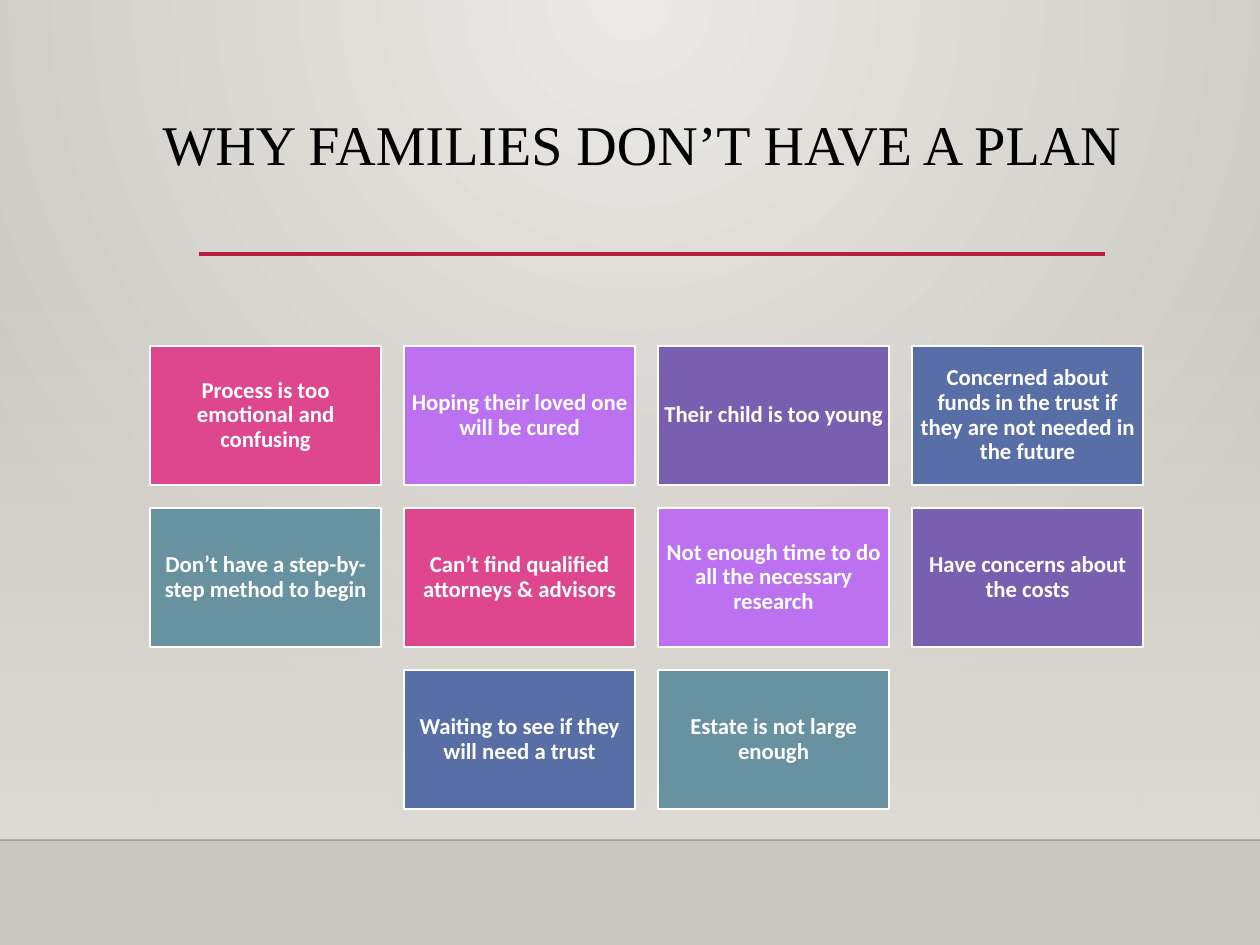
import pptx
import pptx.util
import pptx.dml.color
import pptx.enum.shapes
import pptx.enum.text
import pptx.oxml
import pptx.oxml.ns

WIDTH, HEIGHT = 1260, 945
EMU_PER_PX = 914400 / 126
ALIGN = pptx.enum.text.PP_ALIGN
ANCHOR = pptx.enum.text.MSO_ANCHOR


def px(length):
    return pptx.util.Emu(round(length * EMU_PER_PX))


def rgb(value):
    return pptx.dml.color.RGBColor.from_string(value)


def xml(tag, attributes="", children=""):
    namespace = pptx.oxml.ns.nsdecls("a")
    return pptx.oxml.parse_xml(f"<a:{tag} {namespace} {attributes}>{children}</a:{tag}>")


def set_alpha(color_parent, percent):
    color = color_parent.find(".//" + pptx.oxml.ns.qn("a:srgbClr"))
    color.append(xml("alpha", f'val="{percent * 1000}"'))


def set_values(target, values):
    for name, value in values.items():
        setattr(target, name, value)


class Deck:
    """Holds the text styles and the current slide."""

    title_style = {
        "font": {"name": "Times New Roman", "size": pptx.util.Pt(32), "bold": False},
        "color": "000000",
        "frame": {"vertical_anchor": ANCHOR.TOP, "word_wrap": True},
        "paragraph": {"alignment": ALIGN.LEFT, "line_spacing": 0.9},
    }
    card_style = {
        "font": {"name": "Calibri", "size": pptx.util.Pt(13), "bold": True},
        "color": "FFFFFF",
        "frame": {"vertical_anchor": ANCHOR.MIDDLE, "word_wrap": True,
                  "margin_left": px(6), "margin_right": px(6),
                  "margin_top": px(6), "margin_bottom": px(6)},
        "paragraph": {"alignment": ALIGN.CENTER, "line_spacing": 0.9},
    }

    def __init__(self):
        self.presentation = pptx.Presentation()
        self.presentation.slide_width = px(WIDTH)
        self.presentation.slide_height = px(HEIGHT)
        title_only = self.presentation.slide_layouts[5]
        self.slide = self.presentation.slides.add_slide(title_only)

    def gradient(self, fill, colors):
        fill.gradient()
        for stop, color in zip(fill.gradient_stops, colors):
            stop.color.rgb = rgb(color)

    def background(self, center, edge):
        self.gradient(self.slide.background.fill, (center, edge))
        gradient = self.slide.element.find(".//" + pptx.oxml.ns.qn("a:gradFill"))
        gradient.remove(gradient.find(pptx.oxml.ns.qn("a:lin")))
        gradient.append(xml("path", 'path="circle"',
                            '<a:fillToRect l="43000" t="0" r="43000" b="100000"/>'))

    def rectangle(self, left, top, width, height):
        shape = self.slide.shapes.add_shape(
            pptx.enum.shapes.MSO_SHAPE.RECTANGLE,
            px(left), px(top), px(width), px(height))
        shape.shadow.inherit = False
        return shape

    def fading_band(self, top, bottom, color):
        band = self.rectangle(0, top, WIDTH, bottom - top)
        self.gradient(band.fill, (color, color))
        band.fill.gradient_angle = 270
        set_alpha(band.element.spPr, 0)
        band.line.fill.background()

    def rule(self, left, right, y, color, points, alpha=100):
        line = self.slide.shapes.add_connector(
            pptx.enum.shapes.MSO_CONNECTOR.STRAIGHT,
            px(left), px(y), px(right), px(y))
        line.line.color.rgb = rgb(color)
        line.line.width = pptx.util.Pt(points)
        if alpha < 100:
            set_alpha(line.element.spPr, alpha)
        line.element.spPr.append(xml("effectLst"))

    def put_text(self, shape, text, style):
        frame = shape.text_frame
        set_values(frame, style["frame"])
        frame.text = text
        paragraph = frame.paragraphs[0]
        set_values(paragraph, style["paragraph"])
        set_values(paragraph.font, style["font"])
        paragraph.font.color.rgb = rgb(style["color"])

    def title(self, left, top, width, height, text):
        heading = self.slide.shapes.title
        set_values(heading, {"left": px(left), "top": px(top),
                             "width": px(width), "height": px(height)})
        self.put_text(heading, text, self.title_style)

    def card(self, left, top, width, height, text, color):
        card = self.rectangle(left, top, width, height)
        card.fill.solid()
        card.fill.fore_color.rgb = rgb(color)
        card.line.color.rgb = rgb("FFFFFF")
        card.line.width = pptx.util.Pt(1.25)
        self.put_text(card, text, self.card_style)


CARD_COLORS = ["DE478E", "BC72F0", "795FAF", "586EA6", "6892A0"]
REASONS = [
    "Process is too emotional and confusing",
    "Hoping their loved one will be cured",
    "Their child is too young",
    "Concerned about funds in the trust if they are not needed in the future",
    "Don’t have a step-by-step method to begin",
    "Can’t find qualified attorneys & advisors",
    "Not enough time to do all the necessary research",
    "Have concerns about the costs",
    "Waiting to see if they will need a trust",
    "Estate is not large enough",
]
COLUMNS = 4
GRID_LEFT, GRID_TOP = 150, 346
CARD_WIDTH, CARD_HEIGHT = 231, 139
STEP_X, STEP_Y = 254, 162


def main():
    deck = Deck()

    # Backdrop: radial light, fading wall and floor edge
    deck.background("ECEAE7", "CAC7C1")
    deck.fading_band(277, 840, "DFDBD5")
    deck.rule(0, WIDTH, 840, "000001", 1, alpha=20)

    # Heading with its underline
    deck.rule(199, 1105, 254, "B71E42", 2.5)
    deck.title(150, 111, 993, 145, "WHY FAMILIES DON’T HAVE A PLAN")

    # Reasons in rows of four, the shorter last row centred
    for index, reason in enumerate(REASONS):
        row, column = divmod(index, COLUMNS)
        row_length = min(COLUMNS, len(REASONS) - row * COLUMNS)
        indent = (COLUMNS - row_length) * STEP_X // 2
        deck.card(GRID_LEFT + indent + column * STEP_X, GRID_TOP + row * STEP_Y,
                  CARD_WIDTH, CARD_HEIGHT, reason,
                  CARD_COLORS[index % len(CARD_COLORS)])

    deck.presentation.save("out.pptx")


if __name__ == "__main__":
    main()
